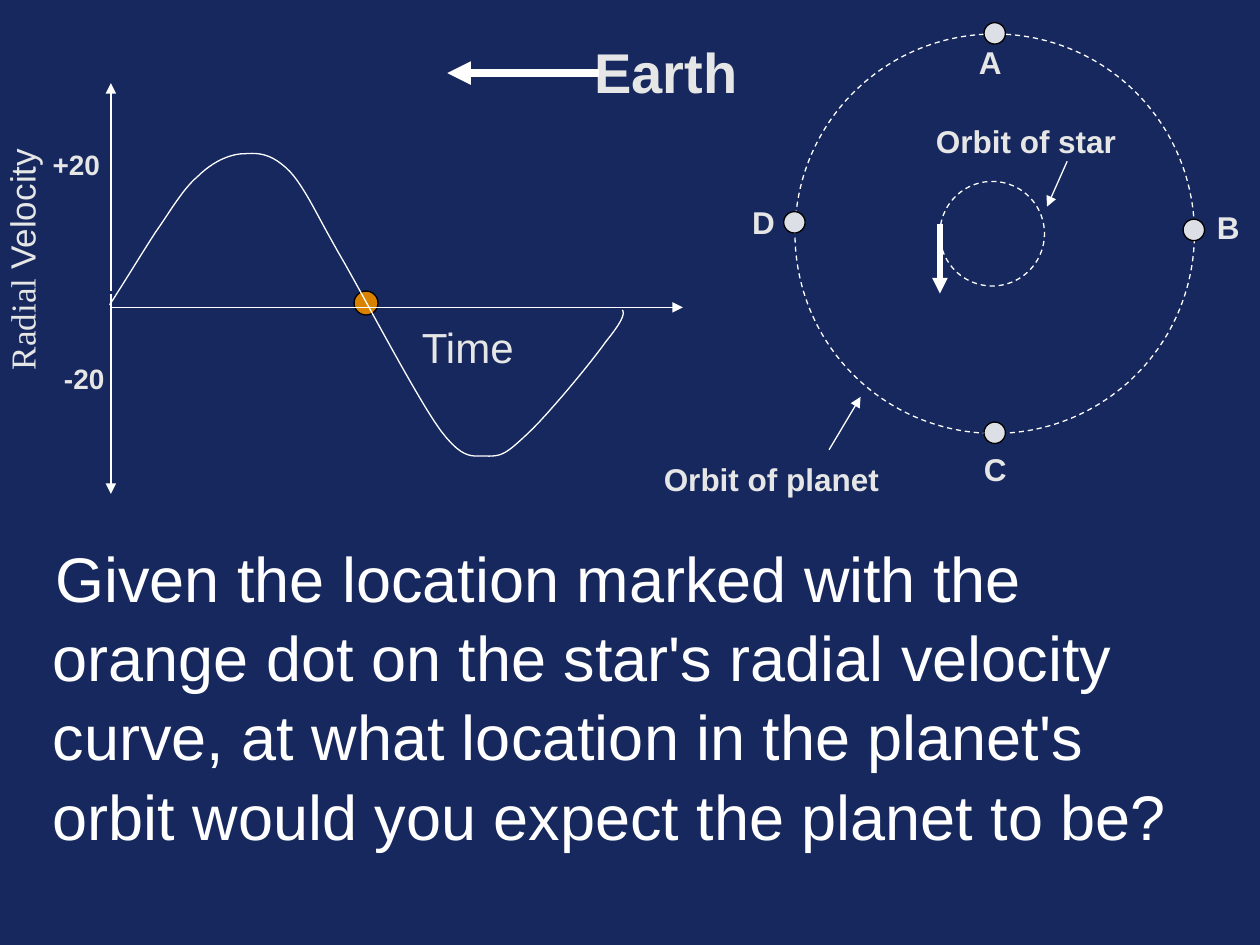
from collections import namedtuple
from lxml.etree import SubElement
from pptx import Presentation
from pptx.dml.color import RGBColor
from pptx.enum.dml import MSO_LINE
from pptx.enum.shapes import MSO_CONNECTOR, MSO_SHAPE
from pptx.oxml.ns import qn
from pptx.util import Inches, Pt

Box = namedtuple("Box", "left top width height")

COLUMNS, ROWS = 100, 75
CELL = Inches(0.1)
WHITE, LABEL, NAVY = "FFFFFF", "E6E6E6", "16285D"
BLACK, PLANET, ORANGE = "000000", "DDDFE6", "D98200"
BOLD_LABEL = {"name": "Arial", "size": Pt(18), "bold": True}
VELOCITY_CURVE = [
    (-0.1, 17.6), (1.2, 15.6), (2.4, 13.6), (3.5, 11.9),
    (4.7, 10.2), (5.7, 8.4), (6.9, 7.4), (8, 6.3), (9.4, 5.6), (10.6, 5.6),
    (11.8, 5.5), (12.8, 5.6), (14.2, 7), (15.5, 8.4), (16.5, 10.8), (18.5, 14.2),
    (20.5, 17.7), (24.3, 25), (26.2, 27.6), (28.1, 30.1), (28.8, 29.5), (30, 29.6),
    (31.1, 29.6), (31.5, 29.3), (33.1, 27.8), (34.7, 26.3), (38.1, 22.2), (39.3, 20.5),
    (40.6, 18.9), (40.8, 18.3), (40.6, 18),
]


def color(value):
    return RGBColor.from_string(value)


def cells(*values):
    return [round(value * CELL) for value in values]


def position(box, column, row):
    return cells(box.left + column, box.top + row)


def apply_format(target, values):
    for name, value in values.items():
        setattr(target, name, value)


def add_text(slide, box, column, row, width, height, runs, wrap=True):
    shape = slide.shapes.add_textbox(*position(box, column, row), *cells(width, height))
    shape.text_frame.word_wrap = wrap
    paragraph = shape.text_frame.paragraphs[0]
    for text, font, text_color in runs:
        run = paragraph.add_run()
        run.text = text
        apply_format(run.font, font)
        run.font.color.rgb = color(text_color)
    return shape


def style_line(line, line_color, width=0.75):
    line.color.rgb = color(line_color)
    line.width = Pt(width)


def add_circle(slide, box, column, row, diameter, fill=None):
    shape = slide.shapes.add_shape(
        MSO_SHAPE.OVAL, *position(box, column, row), *cells(diameter, diameter))
    shape.shadow.inherit = False
    if fill:
        shape.fill.solid()
        shape.fill.fore_color.rgb = color(fill)
        style_line(shape.line, BLACK)
    else:
        shape.fill.background()
        style_line(shape.line, WHITE)
        shape.line.dash_style = MSO_LINE.DASH


def add_arrow(slide, box, start, end, width=0.75):
    arrow = slide.shapes.add_connector(
        MSO_CONNECTOR.STRAIGHT, *position(box, *start), *position(box, *end))
    style_line(arrow.line, WHITE, width)
    properties = arrow._element.spPr
    SubElement(properties.find(qn("a:ln")), qn("a:tailEnd"), type="triangle")
    SubElement(properties, qn("a:effectLst"))


def bezier_points(controls, steps=12):
    for index in range(0, len(controls) - 1, 3):
        segment = controls[index:index + 4]
        for step in range(1, steps + 1):
            t = step / steps
            weights = ((1 - t) ** 3, 3 * t * (1 - t) ** 2, 3 * t ** 2 * (1 - t), t ** 3)
            yield tuple(sum(weight * point[axis] for weight, point in zip(weights, segment))
                        for axis in (0, 1))


def add_curve(slide, box, controls):
    builder = slide.shapes.build_freeform(*position(box, *controls[0]))
    builder.add_line_segments(
        [position(box, *point) for point in bezier_points(controls)], close=False)
    shape = builder.convert_to_shape()
    shape.shadow.inherit = False
    shape.fill.background()
    style_line(shape.line, WHITE)


def build_question(slide, box):
    font = {"name": "Arial", "size": Pt(36)}
    question = ("Given the location marked with the orange dot on the star's radial "
                "velocity curve, at what location in the planet's orbit would you "
                "expect the planet to be?")
    shape = add_text(slide, box, 0, 0, box.width, box.height, [(question, font, WHITE)])
    paragraph = shape.text_frame.paragraphs[0]
    paragraph.line_spacing = 1.05
    properties = paragraph._p.get_or_add_pPr()
    properties.set("marL", str(Inches(0.07)))
    properties.set("indent", str(Inches(0.02)))


def build_orbits(slide, box):
    add_circle(slide, box, 0, 0, box.width)
    planets = [
        ("A", (15, -0.9), (13.6, 0.2)),
        ("B", (30.8, 14.7), (32.5, 13.3)),
        ("C", (15, 30.8), (14, 32.5)),
        ("D", (-0.9, 14.1), (-4.4, 12.9)),
    ]
    for name, dot, label in planets:
        add_circle(slide, box, *dot, 1.7, PLANET)
        add_text(slide, box, *label, 4.2, 4, [(name, BOLD_LABEL, LABEL)])
    add_circle(slide, box, 11.5, 11.7, 8.3)
    add_arrow(slide, box, (11.5, 15.1), (11.5, 20.6), 3)
    captions = [
        ("Orbit of planet", (-11.4, 33.3), (2.7, 33), (5.2, 28.8)),
        ("Orbit of star", (10.2, 6.5), (21.6, 10.1), (20, 13.7)),
    ]
    for text, corner, start, end in captions:
        add_text(slide, box, *corner, 21.7, 4, [(text, BOLD_LABEL, LABEL)])
        add_arrow(slide, box, start, end)


def build_earth_pointer(slide, box):
    font = {"name": "Arial", "size": Pt(32), "bold": True}
    add_text(slide, box, 10.7, 0, 18.8, box.height, [("Earth", font, LABEL)])
    add_arrow(slide, box, (12, 3.3), (0, 3.3), 4.5)


def build_velocity_graph(slide, box):
    add_circle(slide, box, 19.3, 16.5, 1.9, ORANGE)
    tick_font = {"name": "Arial", "size": Pt(16), "bold": True}
    for text, column, row in (("+20", -5.6, 4.6), ("-20", -4.7, 21.6)):
        add_text(slide, box, column, row, 12.4, 3.7, [(text, tick_font, LABEL)])
    title_font = {"size": Pt(20)}
    title = add_text(slide, box, -21.5, 7.1, 28.9, 4.4, [
        ("Radial ", {"name": "Times New Roman", **title_font}, LABEL),
        ("Velocity", {"name": "Arial", **title_font}, LABEL),
    ])
    title.rotation = 270
    time_font = {"name": "Arial", "size": Pt(24)}
    add_text(slide, box, 23.7, 18.4, 15.8, 5.1, [("Time", time_font, LABEL)])
    add_arrow(slide, box, (0, 16.5), (0, 0))
    add_arrow(slide, box, (0, 16.7), (0, box.height))
    add_curve(slide, box, VELOCITY_CURVE)
    add_arrow(slide, box, (0.1, 17.8), (box.width, 17.8))


def main():
    presentation = Presentation()
    presentation.slide_width = CELL * COLUMNS
    presentation.slide_height = CELL * ROWS
    slide = presentation.slides.add_slide(presentation.slide_layouts[6])
    slide.background.fill.solid()
    slide.background.fill.fore_color.rgb = color(NAVY)
    build_question(slide, Box(2.5, 42, 95, 6.7))
    build_orbits(slide, Box(63.1, 2.7, 31.7, 31.7))
    build_earth_pointer(slide, Box(35.5, 2.5, 29.5, 6.4))
    build_velocity_graph(slide, Box(8.8, 6.6, 45.4, 32.6))
    presentation.save("out.pptx")


if __name__ == "__main__":
    main()
